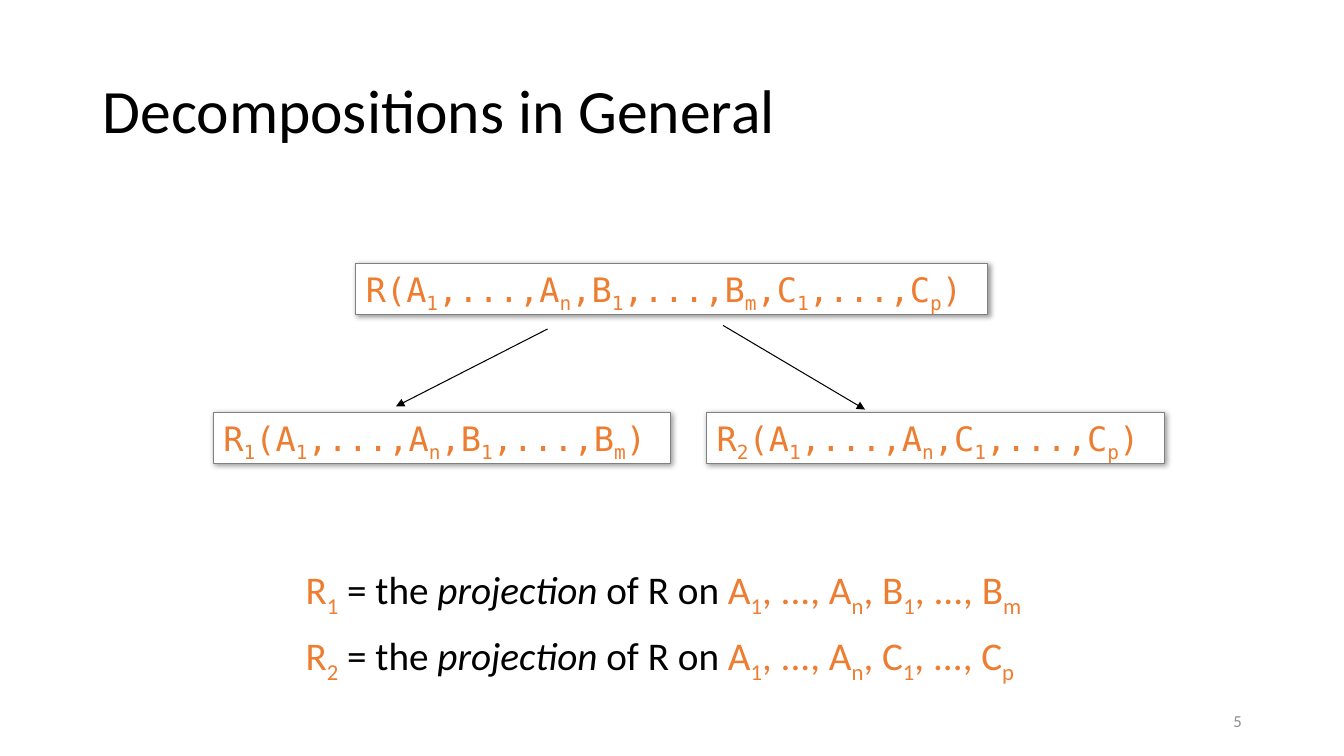
import pptx
import pptx.util
import pptx.dml.color
import pptx.enum.shapes
import pptx.enum.text
import pptx.oxml
import pptx.oxml.ns

Cm, Pt = pptx.util.Cm, pptx.util.Pt
ANCHOR = pptx.enum.text.MSO_ANCHOR
ALIGN = pptx.enum.text.PP_ALIGN
NS = pptx.oxml.ns.nsdecls("a")
SANS, MONO = "Calibri", "DejaVu Sans Mono"
BLACK, WHITE, GREY, ORANGE = "000000", "FFFFFF", "808080", "ED7D31"


def rgb(value):
    return pptx.dml.color.RGBColor.from_string(value)


def add_run(p, text, size, font, color):
    r = p.add_run()
    r.text = text
    r.font.size, r.font.name = Pt(size), font
    r.font.color.rgb = rgb(color)
    return r


def add_formula(p, text, size, font):
    """Add orange runs; every second part between underscores is a subscript."""
    for i, part in enumerate(text.split("_")):
        if part:
            r = add_run(p, part, size, font, ORANGE)
            if i % 2:
                r.font._element.set("baseline", "-25000")


def add_text(s, left, top, width, height):
    sp = s.shapes.add_textbox(Cm(left), Cm(top), Cm(width), Cm(height))
    sp.text_frame.word_wrap = True
    return sp.text_frame


def add_title(s, text):
    sp = s.shapes.title
    sp.left, sp.top, sp.width, sp.height = Cm(2.33), Cm(1.01), Cm(29.21), Cm(3.68)
    tf = sp.text_frame
    tf.vertical_anchor = ANCHOR.MIDDLE
    p = tf.paragraphs[0]
    p.alignment, p.line_spacing = ALIGN.LEFT, 0.9
    add_run(p, text, 44, SANS, BLACK)


def add_relation(s, left, top, width, formula):
    sp = s.shapes.add_shape(pptx.enum.shapes.MSO_SHAPE.RECTANGLE,
                            Cm(left), Cm(top), Cm(width), Cm(1.28))
    sp.fill.solid()
    sp.fill.fore_color.rgb = rgb(WHITE)
    sp.line.color.rgb = rgb(GREY)
    sp.line.width = Pt(0.75)
    # Soft shadow towards the lower right
    sp._element.spPr.append(pptx.oxml.parse_xml(
        f'<a:effectLst {NS}><a:outerShdw blurRad="50800" dist="12700" dir="2700000">'
        f'<a:srgbClr val="{BLACK}"><a:alpha val="40000"/></a:srgbClr>'
        '</a:outerShdw></a:effectLst>'))
    tf = sp.text_frame
    tf.word_wrap = True
    tf.vertical_anchor = ANCHOR.TOP
    p = tf.paragraphs[0]
    p.alignment = ALIGN.LEFT
    add_formula(p, formula, 24, MONO)


def add_arrow(s, x1, y1, x2, y2):
    c = s.shapes.add_connector(pptx.enum.shapes.MSO_CONNECTOR.STRAIGHT,
                               Cm(x1), Cm(y1), Cm(x2), Cm(y2))
    c.line.color.rgb = rgb(BLACK)
    c.line.width = Pt(0.75)
    c.line._get_or_add_ln().append(
        pptx.oxml.parse_xml(f'<a:tailEnd {NS} type="triangle"/>'))
    c._element.spPr.append(pptx.oxml.parse_xml(f'<a:effectLst {NS}/>'))


def add_definition(s, top, relation, attributes):
    p = add_text(s, 7.45, top, 18.95, 1.45).paragraphs[0]
    add_formula(p, relation, 28, SANS)
    add_run(p, " = the ", 28, SANS, BLACK)
    add_run(p, "projection", 28, SANS, BLACK).font.italic = True
    add_run(p, " of R on ", 28, SANS, BLACK)
    add_formula(p, attributes, 28, SANS)


def add_page_number(s, number):
    tf = add_text(s, 23.93, 17.65, 7.62, 1.01)
    tf.vertical_anchor = ANCHOR.MIDDLE
    p = tf.paragraphs[0]
    p.alignment = ALIGN.RIGHT
    add_run(p, number, 12, SANS, "8C8C8C")


def main():
    prs = pptx.Presentation()
    prs.slide_width, prs.slide_height = Cm(33.87), Cm(19.05)
    s = prs.slides.add_slide(prs.slide_layouts[5])
    add_title(s, "Decompositions in General")

    # Relation and its two parts
    add_relation(s, 8.97, 6.65, 15.93, "R(A_1_,...,A_n_,B_1_,...,B_m_,C_1_,...,C_p_)")
    add_relation(s, 5.38, 10.4, 11.53, "R_1_(A_1_,...,A_n_,B_1_,...,B_m_)")
    add_relation(s, 17.81, 10.4, 11.53, "R_2_(A_1_,...,A_n_,C_1_,...,C_p_)")
    add_arrow(s, 13.8, 8.29, 9.98, 10.24)
    add_arrow(s, 18.22, 8.2, 21.8, 10.32)

    # Definitions of the parts
    add_definition(s, 14.13, "R_1_", "A_1_, ..., A_n_, B_1_, ..., B_m_")
    add_definition(s, 15.78, "R_2_", "A_1_, ..., A_n_, C_1_, ..., C_p_")

    add_page_number(s, "5")
    prs.save("out.pptx")


if __name__ == "__main__":
    main()
